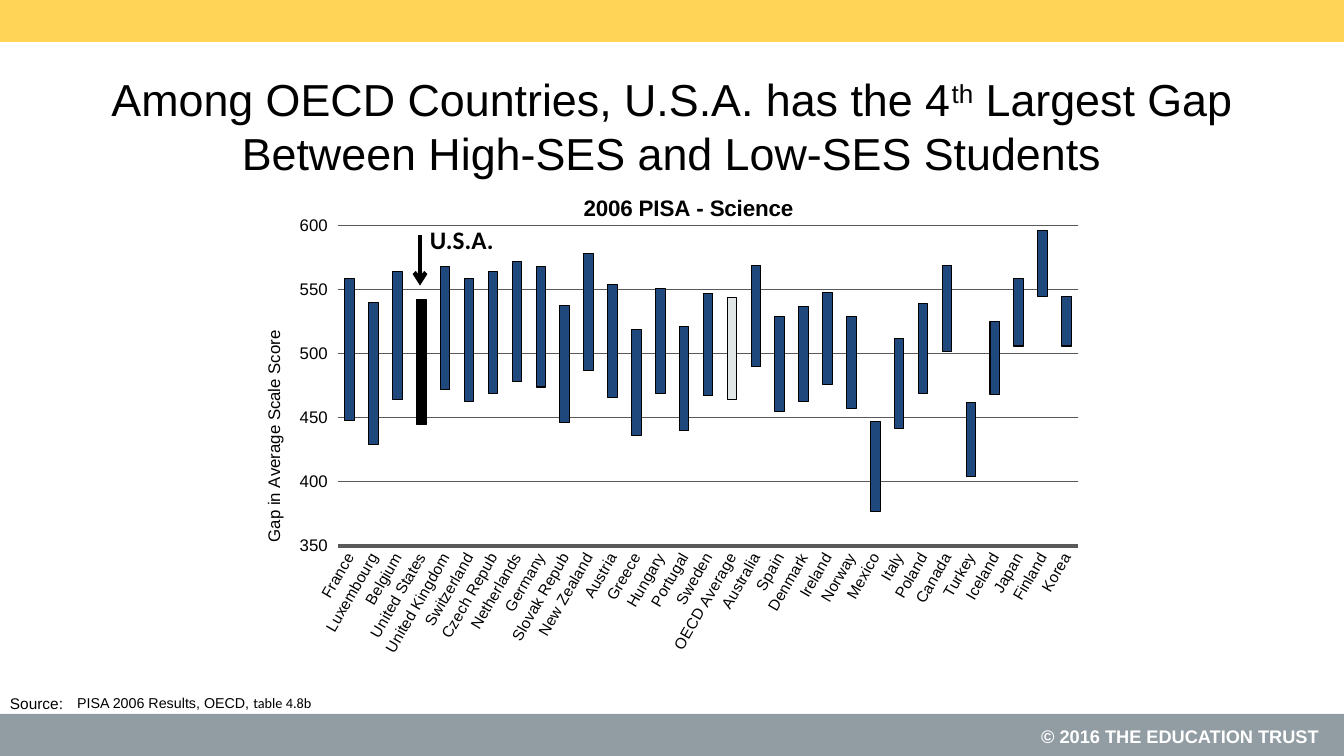
"""Builds a one-slide deck on the PISA 2006 science gap between high- and low-SES students."""
from dataclasses import dataclass

from lxml import etree
from pptx import Presentation
from pptx.chart.data import CategoryChartData
from pptx.dml.color import RGBColor
from pptx.enum.chart import XL_CHART_TYPE as ChartType, XL_TICK_MARK as Tick
from pptx.enum.shapes import MSO_CONNECTOR as Connector, MSO_SHAPE as Shape
from pptx.enum.text import MSO_ANCHOR as Anchor, MSO_AUTO_SIZE as AutoSize, PP_ALIGN as Align
from pptx.oxml.ns import qn
from pptx.util import Emu, Pt

PX = 9525

SCORES = [
    ("France", 448, 111), ("Luxembourg", 429, 111), ("Belgium", 464, 100),
    ("United States", 445, 97), ("United Kingdom", 472, 96), ("Switzerland", 463, 96),
    ("Czech Repub", 469, 95), ("Netherlands", 478, 94), ("Germany", 474, 94),
    ("Slovak Repub", 446, 92), ("New Zealand", 487, 91), ("Austria", 466, 88),
    ("Greece", 436, 83), ("Hungary", 469, 82), ("Portugal", 440, 81),
    ("Sweden", 467, 80), ("OECD Average", 464, 80), ("Australia", 490, 79),
    ("Spain", 455, 74), ("Denmark", 463, 74), ("Ireland", 476, 72),
    ("Norway", 457, 72), ("Mexico", 377, 70), ("Italy", 442, 70),
    ("Poland", 469, 70), ("Canada", 502, 67), ("Turkey", 404, 58),
    ("Iceland", 468, 57), ("Japan", 506, 53), ("Finland", 545, 51), ("Korea", 506, 39),
]


@dataclass(frozen=True)
class Theme:
    """Colours, fonts and type sizes of the slide."""
    ink: str = "000000"
    paper: str = "FFFFFF"
    banner: str = "FFD457"
    footer: str = "919CA3"
    rule: str = "595959"
    bar: str = "1F497D"
    average: str = "E0E5E5"
    sans: str = "Arial"
    accent_font: str = "Calibri"
    headline: float = 32
    callout: float = 18
    chart_title: float = 16
    copyright: float = 13
    axis: float = 12
    small: float = 11
    source: float = 10.2


def px(*lengths):
    """Turn pixel lengths into EMU."""
    return [Emu(length * PX) for length in lengths]


def format_font(font, size, color, name, bold=False):
    """Set the basic look of a font."""
    font.size, font.name, font.bold = Pt(size), name, bold
    font.color.rgb = RGBColor.from_string(color)


def write(paragraph, text, *, size, color, name, bold=False, align=None, baseline=0):
    """Add a formatted run to a paragraph."""
    run = paragraph.add_run()
    run.text = text
    format_font(run.font, size, color, name, bold)
    if baseline:
        run._r.get_or_add_rPr().set("baseline", str(baseline * 1000))
    if align is not None:
        paragraph.alignment = align


def outline(line, color, width):
    """Set the colour and width of a line."""
    line.color.rgb = RGBColor.from_string(color)
    line.width = Pt(width)


def fill_solid(fill, color):
    """Give a fill one solid colour."""
    fill.solid()
    fill.fore_color.rgb = RGBColor.from_string(color)


def place(element, inner=False, **fractions):
    """Give a chart part a manual layout in fractions of the chart."""
    for old in element.findall(qn("c:layout")):
        element.remove(old)
    layout = etree.Element(qn("c:layout"))
    manual = etree.SubElement(layout, qn("c:manualLayout"))
    modes = {"layoutTarget": "inner"} if inner else {}
    for tag, value in {**modes, "xMode": "edge", "yMode": "edge", **fractions}.items():
        etree.SubElement(manual, qn(f"c:{tag}")).set("val", str(value))
    text = element.find(qn("c:tx"))
    if text is None:
        element.insert(0, layout)
    else:
        text.addnext(layout)


class SlideBuilder:
    """Holds the theme and the current slide."""

    def __init__(self, slide, theme):
        self.slide, self.theme = slide, theme

    def band(self, top, height, color):
        """Draw a full-width band."""
        band = self.slide.shapes.add_shape(Shape.RECTANGLE, *px(0, top, 1280, height))
        band.shadow.inherit = False
        fill_solid(band.fill, color)
        band.line.fill.background()

    def title(self, box, pieces):
        """Fill the title placeholder with (text, baseline) pieces."""
        title = self.slide.shapes.title
        title.left, title.top, title.width, title.height = px(*box)
        frame = title.text_frame
        frame.auto_size, frame.vertical_anchor = AutoSize.NONE, Anchor.MIDDLE
        for text, baseline in pieces:
            write(frame.paragraphs[0], text, size=self.theme.headline, color=self.theme.ink,
                  name=self.theme.sans, align=Align.CENTER, baseline=baseline)

    def label(self, box, text, **style):
        """Add a text box and return its paragraph."""
        frame = self.slide.shapes.add_textbox(*px(*box)).text_frame
        frame.word_wrap = True
        look = {"color": self.theme.ink, "name": self.theme.sans, **style}
        write(frame.paragraphs[0], text, **look)
        return frame.paragraphs[0]

    def arrow(self, start, end, width):
        """Draw a straight arrow."""
        arrow = self.slide.shapes.add_connector(Connector.STRAIGHT, *px(*start, *end))
        outline(arrow.line, self.theme.ink, width)
        etree.SubElement(arrow.line._get_or_add_ln(), qn("a:tailEnd")).set("type", "arrow")
        etree.SubElement(arrow._element.spPr, qn("a:effectLst"))

    def gap_chart(self, box, scores, highlights):
        """Add floating columns that run from the low to the high score."""
        theme = self.theme
        countries, lows, gaps = zip(*scores)
        data = CategoryChartData(number_format="0")
        data.categories = countries
        data.add_series("Series 1", lows)
        data.add_series("Series 2", gaps)
        chart = self.slide.shapes.add_chart(ChartType.COLUMN_STACKED, *px(*box), data).chart
        chart.has_legend = False
        format_font(chart.font, theme.axis, theme.ink, theme.sans)

        heading = chart.chart_title
        write(heading.text_frame.paragraphs[0], "2006 PISA - Science", size=theme.chart_title,
              color=theme.ink, name=theme.sans, bold=True)
        place(heading._element, x=0.39, y=0.01)
        place(chart._chartSpace.chart.plotArea, inner=True, x=0.102, y=0.083, w=0.882, h=0.652)

        country_axis, score_axis = chart.category_axis, chart.value_axis
        country_axis.major_tick_mark = Tick.NONE
        format_font(country_axis.tick_labels.font, theme.small, theme.ink, theme.sans)
        country_axis._element.txPr.bodyPr.set("rot", str(-60 * 60000))
        outline(country_axis.format.line, theme.rule, 2.5)

        score_axis.minimum_scale, score_axis.maximum_scale, score_axis.major_unit = 350, 600, 50
        score_axis.major_tick_mark = Tick.OUTSIDE
        score_axis.tick_labels.number_format = "0"
        score_axis.tick_labels.number_format_is_linked = False
        format_font(score_axis.tick_labels.font, theme.axis, theme.ink, theme.sans)
        score_axis.format.line.fill.background()
        outline(score_axis.major_gridlines.format.line, theme.rule, 0.75)
        caption = score_axis.axis_title
        write(caption.text_frame.paragraphs[0], "Gap in Average Scale Score", size=theme.axis,
              color=theme.ink, name=theme.sans)
        caption.text_frame._txBody.bodyPr.set("rot", str(-90 * 60000))
        place(caption._element, x=0.01, y=0.29)

        plot = chart.plots[0]
        plot.gap_width, plot.overlap, plot.vary_by_categories = 150, 100, False
        low_series, gap_series = plot.series
        low_series.format.fill.background()
        low_series.format.line.fill.background()
        bars = [(gap_series, theme.bar)]
        bars += [(gap_series.points[countries.index(c)], color) for c, color in highlights.items()]
        for bar, color in bars:
            fill_solid(bar.format.fill, color)
            outline(bar.format.line, theme.ink, 0.75)


def main():
    """Build and save the slide."""
    theme = Theme()
    deck = Presentation()
    deck.slide_width, deck.slide_height = px(1280, 720)
    page = SlideBuilder(deck.slides.add_slide(deck.slide_layouts[5]), theme)

    page.band(680, 40, theme.footer)
    notice = page.label((870, 686, 395, 31), "© 2016 THE EDUCATION TRUST", size=theme.copyright,
                        color=theme.paper, bold=True, align=Align.RIGHT)
    notice.line_spacing = Pt(16)
    page.band(0, 40, theme.banner)
    page.label((0, 656, 85, 28), "Source:", size=theme.small)
    page.title((64, 64, 1152, 112), [
        ("Among OECD Countries, U.S.A. has the 4", 0), ("th", 30),
        (" Largest Gap Between High-SES and Low-SES Students", 0)])
    page.gap_chart((240, 176, 800, 468), SCORES,
                   {"United States": theme.ink, "OECD Average": theme.average})
    reference = page.label((64, 656, 693, 24), "PISA 2006 Results, OECD, ", size=theme.source)
    write(reference, "table 4.8b", size=theme.source, color=theme.ink, name=theme.accent_font)
    page.arrow((400, 224), (400, 272), 3)
    page.label((400, 209, 96, 38), "U.S.A.", size=theme.callout, name=theme.accent_font, bold=True)

    deck.save("out.pptx")


if __name__ == "__main__":
    main()
